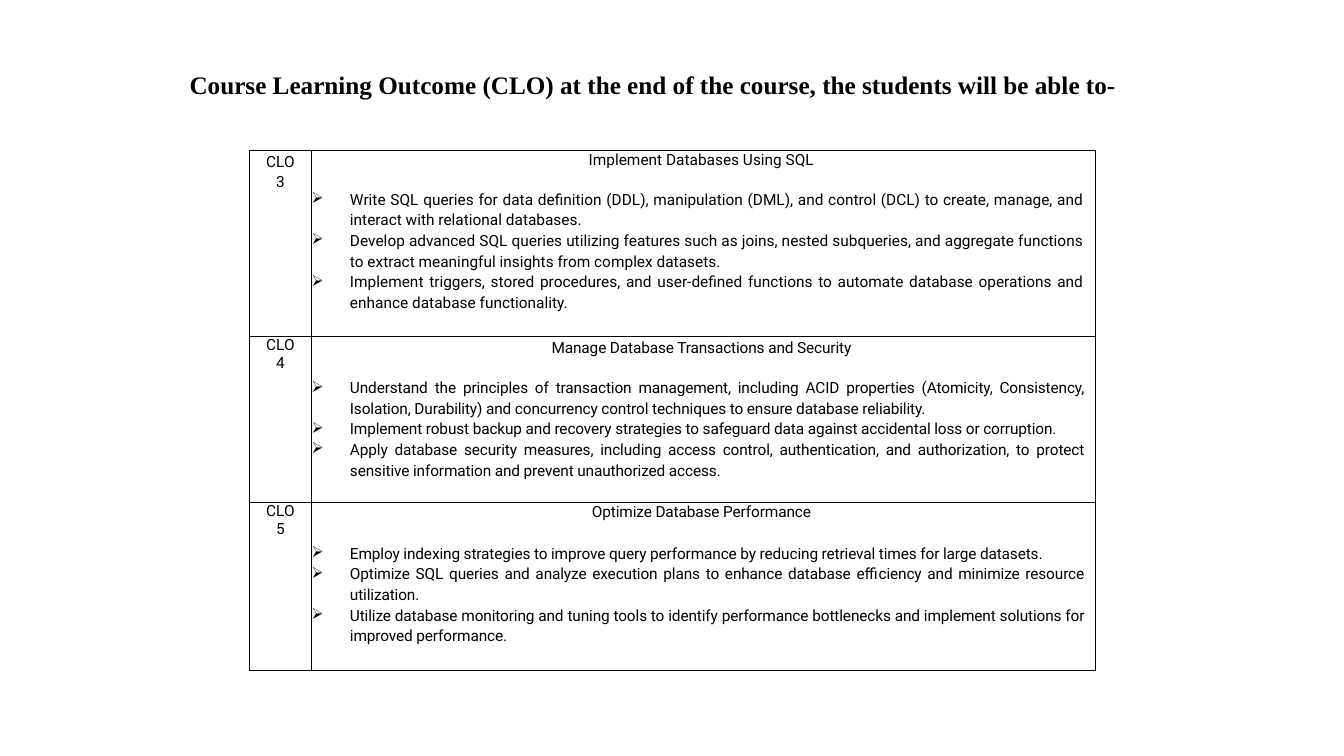
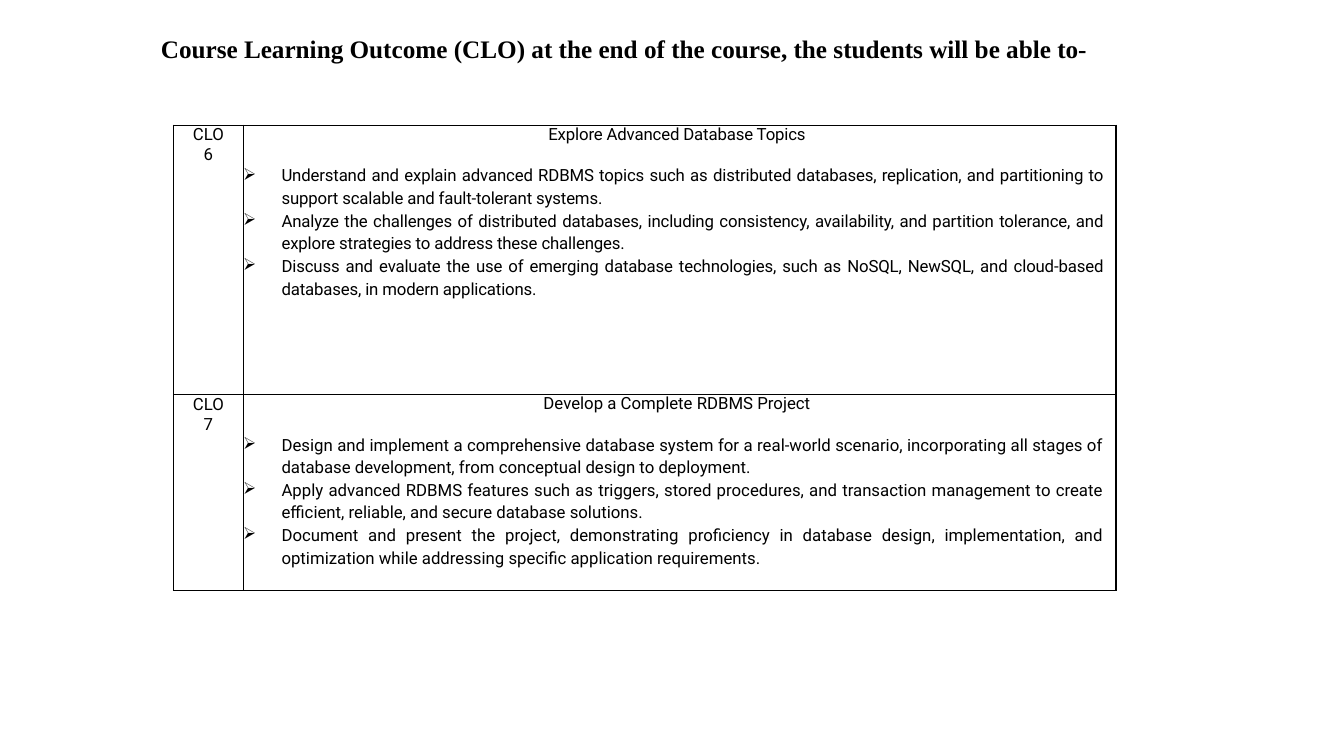
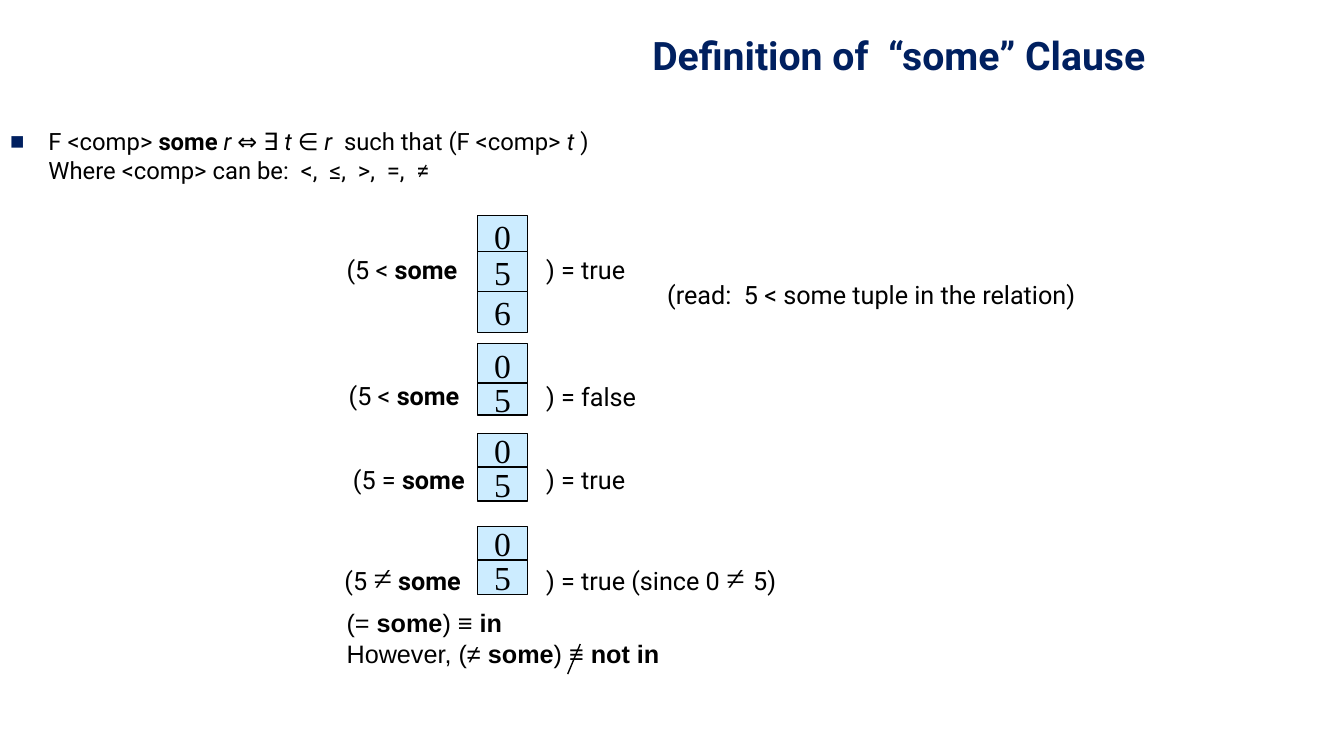
import lxml.etree
import pptx
import pptx.dml.color
import pptx.enum.shapes
import pptx.enum.text
import pptx.oxml.ns
import pptx.util

Pt = pptx.util.Pt
qn = pptx.oxml.ns.qn
Align = pptx.enum.text.PP_ALIGN
Anchor = pptx.enum.text.MSO_ANCHOR

BLACK, NAVY, PALE_BLUE = "000000", "002060", "CCECFF"
SANS, SERIF, PLAIN = "Roboto", "Times New Roman", "Arial"
TITLE_ONLY, TITLE_AND_BODY = 5, 1
BOLD, ITALIC = {"bold": True}, {"italic": True}
BIG_SERIF = {"size": 24, "font": SERIF}
HANG = 27.4


def colour(hex_code):
    return pptx.dml.color.RGBColor.from_string(hex_code)


def write(para, text, *, size=18, font=SANS, ink=BLACK, bold=False, tracking=0,
          align=Align.LEFT, line=None, before=0, indent=0, hang=0, right=0,
          bullet=None, bullet_ink=BLACK):
    """Fill a paragraph; text is a string or a list of (text, format changes)."""
    props = para._p.get_or_add_pPr()
    props.set("marL", str(Pt(indent)))
    props.set("marR", str(Pt(right)))
    props.set("indent", str(Pt(-hang)))
    if bullet:
        tint = lxml.etree.SubElement(props, qn("a:buClr"))
        lxml.etree.SubElement(tint, qn("a:srgbClr"), val=bullet_ink)
        lxml.etree.SubElement(props, qn("a:buChar"), char=bullet)
    else:
        lxml.etree.SubElement(props, qn("a:buNone"))
    para.alignment = align
    para.space_before = Pt(before)
    if line:
        para.line_spacing = line
    for words, changes in [(text, {})] if isinstance(text, str) else text:
        span = para.add_run()
        span.text = words
        span.font.size = Pt(changes.get("size", size))
        span.font.name = changes.get("font", font)
        span.font.bold = changes.get("bold", bold)
        span.font.italic = changes.get("italic", False)
        span.font.color.rgb = colour(ink)
        if tracking:
            span._r.get_or_add_rPr().set("spc", str(round(tracking * 100)))


deck = pptx.Presentation()
deck.slide_width, deck.slide_height = Pt(960), Pt(540)

# Outcome tables
# Row: label, label line, heading, heading line, gap below it, tracking, height, bullets
outcome_pages = [
    {"title_at": (116, 43), "table_at": (178, 107.5), "columns": (44.6, 560),
     "size": 11, "margin": 8, "rows": [
        ("CLO3", Pt(14.6), "Implement Databases Using SQL", 13.5, 13.5, 0, 133, [
            "Write SQL queries for data definition (DDL), manipulation (DML), and control (DCL) to create, manage, and interact with relational databases.",
            "Develop advanced SQL queries utilizing features such as joins, nested subqueries, and aggregate functions to extract meaningful insights from complex datasets.",
            "Implement triggers, stored procedures, and user-defined functions to automate database operations and enhance database functionality."]),
        ("CLO4", None, "Manage Database Transactions and Security", 14.8, 13.8, -0.1, 118.5, [
            "Understand the principles of transaction management, including ACID properties (Atomicity, Consistency, Isolation, Durability) and concurrency control techniques to ensure database reliability.",
            "Implement robust backup and recovery strategies to safeguard data against accidental loss or corruption.",
            "Apply database security measures, including access control, authentication, and authorization, to protect sensitive information and prevent unauthorized access."]),
        ("CLO5", None, "Optimize Database Performance", 13.5, 14.9, -0.1, 120, [
            "Employ indexing strategies to improve query performance by reducing retrieval times for large datasets.",
            "Optimize SQL queries and analyze execution plans to enhance database efficiency and minimize resource utilization.",
            "Utilize database monitoring and tuning tools to identify performance bottlenecks and implement solutions for improved performance."]),
     ]},
    {"title_at": (95.5, 17.5), "table_at": (124, 89.5), "columns": (49.7, 623.5),
     "size": 12, "margin": 8.6, "rows": [
        ("CLO6", None, "Explore Advanced Database Topics", 13.6, 13.6, -0.1, 192.5, [
            "Understand and explain advanced RDBMS topics such as distributed databases, replication, and partitioning to support scalable and fault-tolerant systems.",
            "Analyze the challenges of distributed databases, including consistency, availability, and partition tolerance, and explore strategies to address these challenges.",
            "Discuss and evaluate the use of emerging database technologies, such as NoSQL, NewSQL, and cloud-based databases, in modern applications."]),
        ("CLO7", None, "Develop a Complete RDBMS Project", 13.5, 13.5, 0, 140, [
            "Design and implement a comprehensive database system for a real-world scenario, incorporating all stages of database development, from conceptual design to deployment.",
            "Apply advanced RDBMS features such as triggers, stored procedures, and transaction management to create efficient, reliable, and secure database solutions.",
            "Document and present the project, demonstrating proficiency in database design, implementation, and optimization while addressing specific application requirements."]),
     ]},
]

for content in outcome_pages:
    page = deck.slides.add_slide(deck.slide_layouts[TITLE_ONLY])
    title = page.shapes.title
    title.left, title.top = map(Pt, content["title_at"])
    title.width, title.height = Pt(701), Pt(48)
    frame = title.text_frame
    frame.auto_size = pptx.enum.text.MSO_AUTO_SIZE.NONE
    frame.vertical_anchor = Anchor.TOP
    frame.margin_left, frame.margin_top = Pt(19.4), Pt(6.5)
    frame.margin_right = frame.margin_bottom = 0
    write(frame.paragraphs[0],
          "Course Learning Outcome (CLO) at the end of the course, the students will be able to-",
          font=SERIF, bold=True)

    rows, size = content["rows"], content["size"]
    left, top = content["table_at"]
    table = page.shapes.add_table(
        len(rows), 2, Pt(left), Pt(top), Pt(sum(content["columns"])),
        Pt(sum(row[6] for row in rows))).table
    table.first_row = table.horz_banding = False
    for column, width in zip(table.columns, content["columns"]):
        column.width = Pt(width)

    for index, row in enumerate(rows):
        label, label_line, heading, heading_line, gap, tracking, height, points = row
        table.rows[index].height = Pt(height)
        label_cell, outcome_cell = table.rows[index].cells
        for cell in (label_cell, outcome_cell):
            cell.margin_left = cell.margin_right = cell.margin_top = cell.margin_bottom = 0
            cell.fill.background()
            cell_props = cell._tc.get_or_add_tcPr()
            for place, side in enumerate(("lnL", "lnR", "lnT", "lnB")):
                border = lxml.etree.Element(qn("a:" + side), w=str(Pt(1)))
                solid = lxml.etree.SubElement(border, qn("a:solidFill"))
                lxml.etree.SubElement(solid, qn("a:srgbClr"), val=BLACK)
                cell_props.insert(place, border)
        outcome_cell.margin_right = Pt(content["margin"])

        write(label_cell.text_frame.paragraphs[0], label, size=size, align=Align.CENTER,
              line=label_line, indent=11.5, right=11.5)
        frame = outcome_cell.text_frame
        write(frame.paragraphs[0], heading, size=size, align=Align.CENTER,
              line=Pt(heading_line), indent=5, tracking=tracking)
        for number, point in enumerate(points):
            write(frame.add_paragraph(), point, size=size, align=Align.JUSTIFY, line=1.15,
                  before=0 if number else gap, indent=HANG, hang=HANG, bullet="➢",
                  tracking=tracking)

# Definition of the clause
page = deck.slides.add_slide(deck.slide_layouts[TITLE_AND_BODY])
title, body = page.shapes.title, page.placeholders[1]
for holder, area, anchor in ((title, (324, 11.5, 636, 48), Anchor.BOTTOM),
                             (body, (0, 87, 536, 56), Anchor.TOP)):
    holder.left, holder.top, holder.width, holder.height = map(Pt, area)
    holder.text_frame.auto_size = pptx.enum.text.MSO_AUTO_SIZE.NONE
    holder.text_frame.vertical_anchor = anchor
write(title.text_frame.paragraphs[0], "Definition of  “some” Clause",
      size=28, ink=NAVY, bold=True, align=Align.CENTER)
write(body.text_frame.paragraphs[0],
      [("F <comp> ", {}), ("some ", BOLD), ("r ", ITALIC), ("⇔ ∃ ", {}), ("t ", ITALIC),
       ("∈", {}), (" r  ", ITALIC), ("such that (F <comp> ", {}), ("t ", ITALIC), (")", {})],
      size=17, indent=HANG, hang=HANG, bullet="■", bullet_ink=NAVY)
write(body.text_frame.add_paragraph(), "Where <comp> can be:  <,  ≤,  >,  =,  ≠",
      size=17, indent=HANG)

relation_cells = [
    ("0", 154, 29.5), ("5", 179.5, 29.5), ("6", 208, 29.5),
    ("0", 245.5, 30), ("5", 273.5, 23),
    ("0", 309.5, 24.5), ("5", 333.5, 24.5),
    ("0", 376, 24.5), ("5", 400, 24.5),
]
for value, top, height in relation_cells:
    box = page.shapes.add_shape(pptx.enum.shapes.MSO_SHAPE.RECTANGLE,
                                Pt(341), Pt(top), Pt(36), Pt(height))
    box.shadow.inherit = False
    box.fill.solid()
    box.fill.fore_color.rgb = colour(PALE_BLUE)
    box.line.color.rgb = colour(BLACK)
    box.line.width = Pt(1)
    box.text_frame.word_wrap = False
    box.text_frame.vertical_anchor = Anchor.MIDDLE
    write(box.text_frame.paragraphs[0], value, align=Align.CENTER, **BIG_SERIF)

# Each label: left, top, width, height, font, lines
less_than_some = [("(5 < ", {}), ("some", BOLD)]
labels = [
    (240.5, 178, 106.5, 29, SANS, [less_than_some]),
    (383, 178, 72, 29, SANS, [") = true"]),
    (469.5, 196, 384, 29, SANS, ["(read:  5 < some tuple in the relation)"]),
    (242, 268, 108.5, 29, SANS, [less_than_some]),
    (383, 269, 96, 29, SANS, [") = false"]),
    (245, 328, 120, 29, SANS, [[("(5 = ", {}), ("some", BOLD)]]),
    (383, 328, 96, 29, SANS, [") = true"]),
    (239, 394, 114, 36, SANS, [[("(5 ", {}), ("≠", BIG_SERIF), (" ", {}), ("some", BOLD)]]),
    (383, 394, 198, 36, SANS, [[(") = true (since 0 ", {}), ("≠ ", BIG_SERIF), ("5)", {})]]),
    (240.5, 430.5, 536, 56, PLAIN, [
        [("(= ", {}), ("some", BOLD), (") ≡ ", {}), ("in", BOLD)],
        [("However, (≠ ", {}), ("some", BOLD), (") ≡ ", {}), ("not in", BOLD)]]),
]
for left, top, width, height, font, lines in labels:
    frame = page.shapes.add_textbox(Pt(left), Pt(top), Pt(width), Pt(height)).text_frame
    frame.word_wrap = True
    for number, text in enumerate(lines):
        write(frame.add_paragraph() if number else frame.paragraphs[0], text, font=font)

slash = page.shapes.add_connector(pptx.enum.shapes.MSO_CONNECTOR.STRAIGHT,
                                  Pt(414.5), Pt(460), Pt(405.5), Pt(481.5))
slash.line.color.rgb = colour(BLACK)
slash.line.width = Pt(1)
lxml.etree.SubElement(slash._element.spPr, qn("a:effectLst"))

deck.save("out.pptx")
